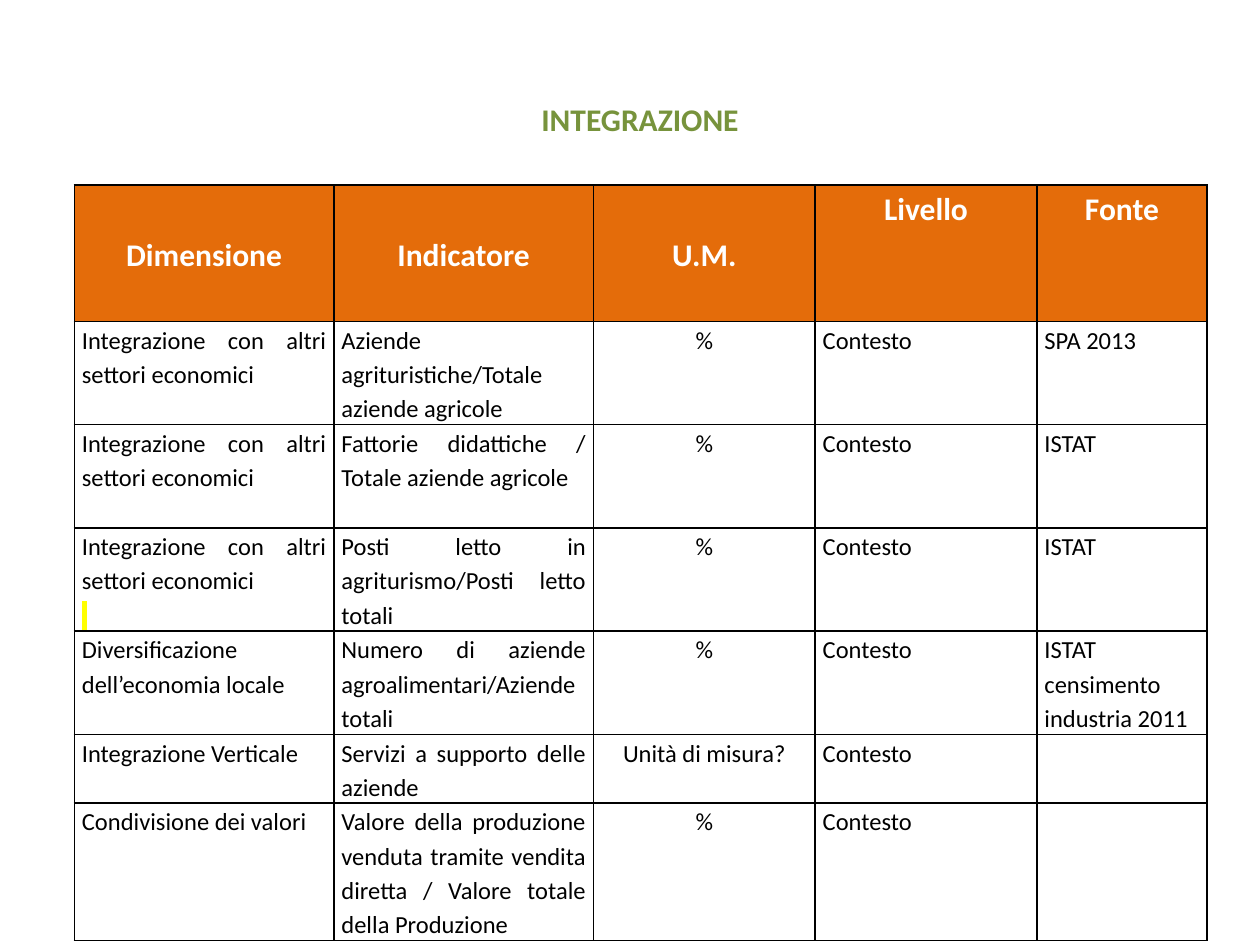
"""Build a slide with a table of integration indicators."""
from lxml import etree
from pptx import Presentation
from pptx import util as u
from pptx.dml.color import RGBColor
from pptx.enum import text
from pptx.oxml import ns

COLORS = {"title": "77933C", "header": "E46C0A", "header_text": "FFFFFF",
          "body": "000000", "border": "000000", "mark": "FFFF00"}
FONT = "Calibri"
COLUMN_WIDTHS = [2.06, 2.06, 1.76, 1.76, 1.35]
ROW_HEIGHTS = [1.08, 0.82, 0.82, 0.82, 0.82, 0.54, 1.09]
HEADERS = ["Dimensione", "Indicatore", "U.M.", "Livello", "Fonte"]
SECTORS = "Integrazione con altri settori economici"
INDICATORS = [
    (SECTORS, "Aziende agrituristiche/Totale aziende agricole", "%", "SPA 2013"),
    (SECTORS, "Fattorie didattiche / Totale aziende agricole", "%", "ISTAT"),
    (SECTORS, "Posti letto in agriturismo/Posti letto totali", "%", "ISTAT"),
    ("Diversificazione dell’economia locale",
     "Numero di aziende agroalimentari/Aziende totali", "%",
     "ISTAT censimento industria 2011"),
    ("Integrazione Verticale", "Servizi a supporto delle aziende",
     "Unità di misura?", ""),
    ("Condivisione dei valori",
     "Valore della produzione venduta tramite vendita diretta / "
     "Valore totale della Produzione", "%", ""),
]
MARKED_ROW = 3
CENTER, JUSTIFY = text.PP_ALIGN.CENTER, text.PP_ALIGN.JUSTIFY


def add_span(para, words, size, color, bold=False, mark=None):
    span = para.add_run()
    span.text = words
    span.font.size = u.Pt(size)
    span.font.bold = bold
    span.font.color.rgb = RGBColor.from_string(COLORS[color])
    if mark:
        highlight = etree.SubElement(span.font._element, ns.qn("a:highlight"))
        etree.SubElement(highlight, ns.qn("a:srgbClr"), val=COLORS[mark])
    span.font.name = FONT


def add_title(page, words):
    title = page.shapes.title
    title.left, title.top, title.width, title.height = map(
        u.Inches, (2.56, 0.74, 5.04, 0.4))
    title.text_frame.vertical_anchor = text.MSO_ANCHOR.TOP
    para = title.text_frame.paragraphs[0]
    para.alignment = CENTER
    add_span(para, words, 18, "title", bold=True)


def set_borders(cell):
    properties = cell._tc.get_or_add_tcPr()
    for position, side in enumerate("LRTB"):
        line = etree.Element(ns.qn(f"a:ln{side}"), w=str(u.Pt(1)))
        fill = etree.SubElement(line, ns.qn("a:solidFill"))
        etree.SubElement(fill, ns.qn("a:srgbClr"), val=COLORS["border"])
        properties.insert(position, line)


def format_cell(cell, inset, fill=None):
    cell.margin_left = cell.margin_right = u.Inches(inset)
    cell.margin_top = cell.margin_bottom = 0
    if fill:
        cell.fill.solid()
        cell.fill.fore_color.rgb = RGBColor.from_string(COLORS[fill])
    else:
        cell.fill.background()
    set_borders(cell)


def format_para(para, align):
    para.alignment = align
    para.line_spacing = 1.15
    return para


def fill_header(table):
    for column, words in enumerate(HEADERS):
        cell = table.cell(0, column)
        format_cell(cell, 0.05, "header")
        cell.vertical_anchor = (text.MSO_ANCHOR.MIDDLE if column < 3
                                else text.MSO_ANCHOR.TOP)
        para = format_para(cell.text_frame.paragraphs[0], CENTER)
        add_span(para, words, 18, "header_text", bold=True)


def fill_body(table):
    for row, (dimension, indicator, unit, source) in enumerate(INDICATORS, 1):
        values = (dimension, indicator, unit, "Contesto", source)
        for column, words in enumerate(values):
            cell = table.cell(row, column)
            format_cell(cell, 0.06)
            para = format_para(cell.text_frame.paragraphs[0],
                               CENTER if column == 2 else JUSTIFY)
            if words:
                add_span(para, words, 14, "body")
    marked = table.cell(MARKED_ROW, 0).text_frame.add_paragraph()
    add_span(format_para(marked, JUSTIFY), " ", 14, "body", mark="mark")


def add_indicator_table(page):
    frame = page.shapes.add_table(
        len(ROW_HEIGHTS), len(COLUMN_WIDTHS), u.Inches(0.59), u.Inches(1.47),
        u.Inches(sum(COLUMN_WIDTHS)), u.Inches(sum(ROW_HEIGHTS)))
    table = frame.table
    table.horz_banding = False
    for column, width in zip(table.columns, COLUMN_WIDTHS):
        column.width = u.Inches(width)
    for row, height in zip(table.rows, ROW_HEIGHTS):
        row.height = u.Inches(height)
    fill_header(table)
    fill_body(table)


def main():
    deck = Presentation()
    deck.slide_width, deck.slide_height = u.Inches(10), u.Inches(7.5)
    page = deck.slides.add_slide(deck.slide_layouts[5])
    add_indicator_table(page)
    add_title(page, "INTEGRAZIONE")
    deck.save("out.pptx")


if __name__ == "__main__":
    main()
